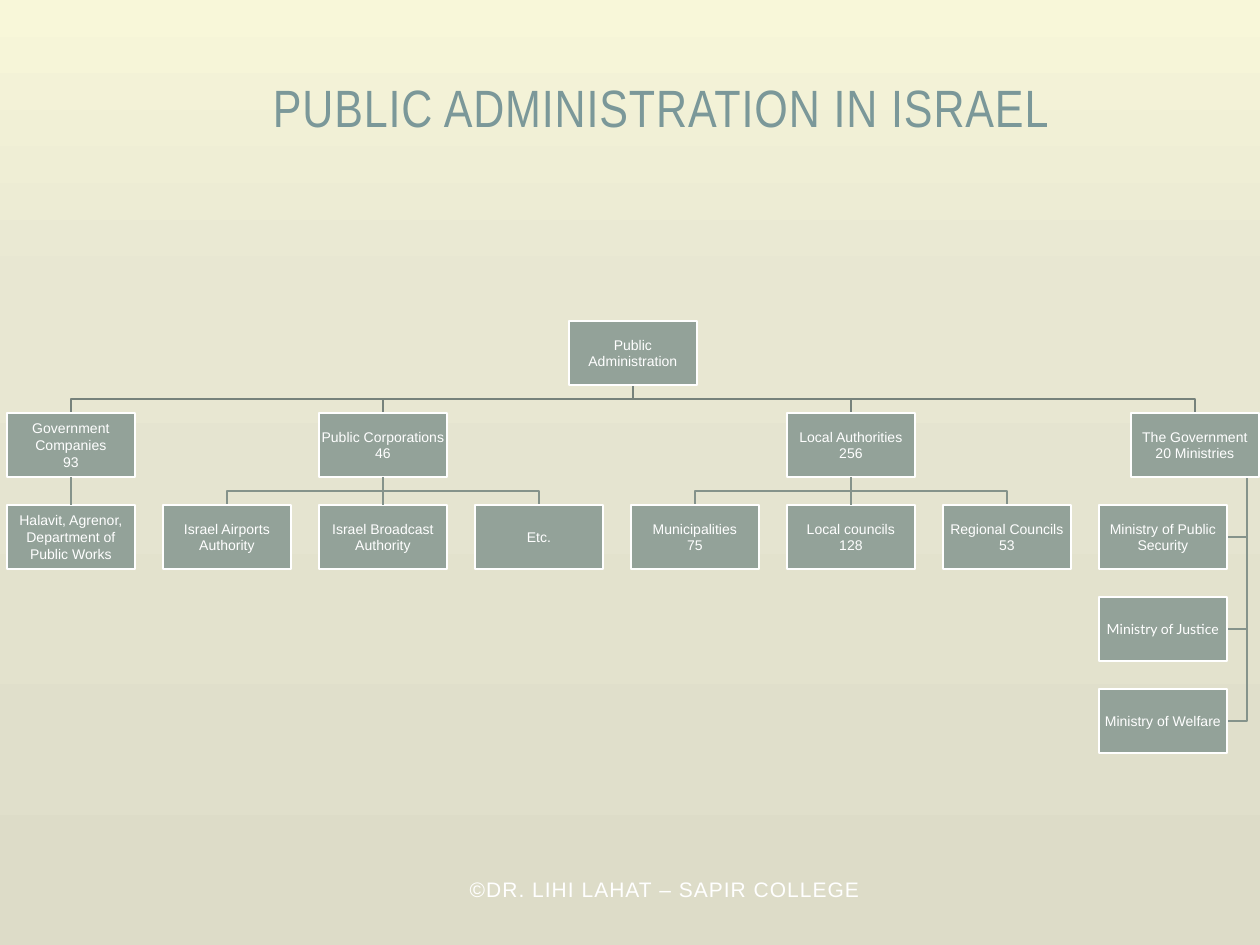
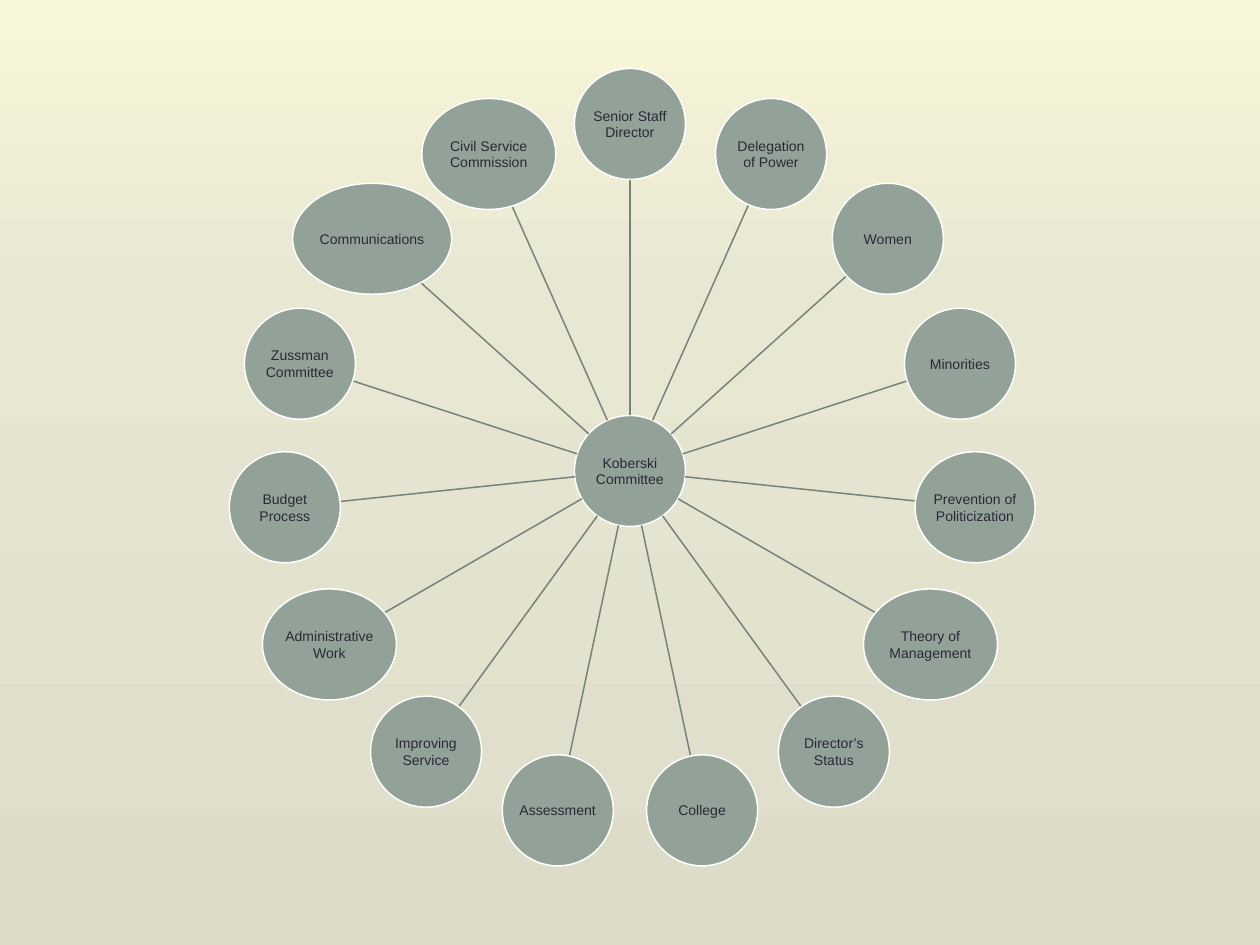
"""Build two slides: Israel's public administration tree and the Koberski Committee wheel."""
import copy
import math
from dataclasses import dataclass

from lxml import etree
from pptx import Presentation
from pptx import util as u
from pptx.dml.color import RGBColor
from pptx.enum import shapes, text
from pptx.oxml import ns


@dataclass(frozen=True)
class Theme:
    background: tuple = ((0, "F8F7D9"), (0.31, "E8E7D2"), (1, "DDDCC8"))
    title: str = "7B9899"
    node: str = "93A299"
    white: str = "FFFFFF"
    dark: str = "292934"
    main_line: str = "76827B"
    sub_line: str = "85938B"
    title_font: str = "Arial Narrow"
    body_font: str = "Arial"
    accent_font: str = "Lato"
    title_size: int = 30
    space_size: int = 18
    footer_size: int = 12
    node_size: int = 8
    line_width: float = 0.85


theme = Theme()
SCALE = 914400 / 126


def style_line(shape, color):
    shape.line.color.rgb = RGBColor.from_string(color)
    shape.line.width = u.Pt(theme.line_width)
    etree.SubElement(shape.element.spPr, ns.qn("a:effectLst"))


def add_node(slide, preset, box, label, color, font=theme.body_font):
    shape = slide.shapes.add_shape(preset, *(round(length * SCALE) for length in box))
    shape.fill.solid()
    shape.fill.fore_color.rgb = RGBColor.from_string(theme.node)
    style_line(shape, theme.white)
    frame = shape.text_frame
    frame.margin_left = frame.margin_right = frame.margin_top = frame.margin_bottom = 0
    frame.vertical_anchor = text.MSO_ANCHOR.MIDDLE
    frame.word_wrap = True
    frame.text = label
    for paragraph in frame.paragraphs:
        paragraph.alignment = text.PP_ALIGN.CENTER
        paragraph.font.name = font
        paragraph.font.size = u.Pt(theme.node_size)
        paragraph.font.color.rgb = RGBColor.from_string(color)
    return shape


presentation = Presentation()
presentation.slide_width = round(1260 * SCALE)
presentation.slide_height = round(945 * SCALE)

master = presentation.slide_master
fill = master.background.fill
fill.gradient()
fill.gradient_angle = 270
stop_list = next(master.element.iter(ns.qn("a:gsLst")))
stop_list.append(copy.deepcopy(stop_list[0]))
for stop, (position, color) in zip(fill.gradient_stops, theme.background):
    stop.position = position
    stop.color.rgb = RGBColor.from_string(color)

slide = presentation.slides.add_slide(presentation.slide_layouts[5])
title = slide.shapes.title
title.left, title.top, title.width, title.height = (
    round(length * SCALE) for length in (126, 38, 1071, 106))
title.text_frame.text = "PUBLIC ADMINISTRATION IN ISRAEL"
title.text_frame.vertical_anchor = text.MSO_ANCHOR.BOTTOM
title.text_frame.auto_size = text.MSO_AUTO_SIZE.NONE
paragraph = title.text_frame.paragraphs[0]
paragraph.alignment = text.PP_ALIGN.CENTER
paragraph.font.name = theme.title_font
paragraph.font.size = u.Pt(theme.title_size)
paragraph.font.color.rgb = RGBColor.from_string(theme.title)
paragraph.runs[0]._r.get_or_add_rPr().set("spc", "50")

footer = slide.shapes.add_textbox(*(round(length * SCALE) for length in (432, 860, 456, 63)))
footer.text_frame.word_wrap = True
paragraph = footer.text_frame.paragraphs[0]
paragraph.alignment = text.PP_ALIGN.CENTER
paragraph.font.name = theme.body_font
paragraph.font.color.rgb = RGBColor.from_string(theme.white)
for words, size in ((" ", theme.space_size),
                    ("©DR. LIHI LAHAT – SAPIR COLLEGE", theme.footer_size)):
    run = paragraph.add_run()
    run.text = words
    run.font.size = u.Pt(size)
    run._r.get_or_add_rPr().set("spc", "60")

NODE_WIDTH, NODE_HEIGHT = 128, 64
HALF_WIDTH, HALF_HEIGHT = NODE_WIDTH // 2, NODE_HEIGHT // 2
ROOT_TOP, ROW_STEP = 321, 92
BRANCH_TOP, LEAF_TOP = ROOT_TOP + ROW_STEP, ROOT_TOP + 2 * ROW_STEP
HALF_GAP = (ROW_STEP - NODE_HEIGHT) // 2
column_centers = [71 + 156 * column for column in range(8)]
ROOT_CENTER, GOVERNMENT_CENTER, TRUNK_X = 633, 1195, 1247

branches = [
    ("Government\nCompanies\n93", 0, ["Halavit, Agrenor, Department of Public Works"]),
    ("Public Corporations\n46", 1,
     ["Israel Airports Authority", "Israel Broadcast Authority", "Etc."]),
    ("Local Authorities\n256", 4,
     ["Municipalities\n75", "Local councils\n128", "Regional Councils\n53"]),
]
ministries = [
    ("Ministry of Public Security", theme.body_font),
    ("Ministry of Justice", theme.accent_font),
    ("Ministry of Welfare", theme.body_font),
]

nodes = [(ROOT_CENTER, ROOT_TOP, "Public Administration", theme.body_font),
         (GOVERNMENT_CENTER, BRANCH_TOP, "The Government\n20 Ministries", theme.body_font)]
elbows = []
straight_links = []
branch_centers = [GOVERNMENT_CENTER]
for label, first_column, leaves in branches:
    leaf_centers = column_centers[first_column:first_column + len(leaves)]
    center = leaf_centers[len(leaves) // 2]
    branch_centers.append(center)
    nodes.append((center, BRANCH_TOP, label, theme.body_font))
    branch_index = len(nodes) - 1
    for leaf, leaf_center in zip(leaves, leaf_centers):
        nodes.append((leaf_center, LEAF_TOP, leaf, theme.body_font))
        if leaf_center == center:
            straight_links.append((branch_index, len(nodes) - 1))
        else:
            bend = LEAF_TOP - HALF_GAP
            elbows.append((theme.sub_line, [(center, BRANCH_TOP + NODE_HEIGHT), (center, bend),
                                            (leaf_center, bend), (leaf_center, LEAF_TOP)]))
for row, (label, font) in enumerate(ministries):
    top = LEAF_TOP + row * ROW_STEP
    nodes.append((column_centers[7], top, label, font))
    elbows.append((theme.sub_line, [(TRUNK_X, BRANCH_TOP + NODE_HEIGHT),
                                    (TRUNK_X, top + HALF_HEIGHT),
                                    (column_centers[7] + HALF_WIDTH, top + HALF_HEIGHT)]))
for center in branch_centers:
    bend = BRANCH_TOP - HALF_GAP
    elbows.append((theme.main_line, [(ROOT_CENTER, ROOT_TOP + NODE_HEIGHT), (ROOT_CENTER, bend),
                                     (center, bend), (center, BRANCH_TOP)]))

for color, points in elbows:
    builder = slide.shapes.build_freeform(*points[0], scale=SCALE)
    builder.add_line_segments(points[1:], close=False)
    elbow = builder.convert_to_shape()
    elbow.fill.background()
    style_line(elbow, color)
boxes = [add_node(slide, shapes.MSO_SHAPE.RECTANGLE,
                  (center - HALF_WIDTH, top, NODE_WIDTH, NODE_HEIGHT), label, theme.white, font)
         for center, top, label, font in nodes]
for parent, child in straight_links:
    connector = slide.shapes.add_connector(shapes.MSO_CONNECTOR.STRAIGHT, 0, 0, 0, 0)
    connector.begin_connect(boxes[parent], 2)
    connector.end_connect(boxes[child], 0)
    style_line(connector, theme.sub_line)

slide = presentation.slides.add_slide(presentation.slide_layouts[6])
HUB_X, HUB_Y, RADIUS, DIAMETER = 630, 471, 347, 111
topics = [
    ("Senior Staff Director", DIAMETER),
    ("Delegation of Power", DIAMETER),
    ("Women", DIAMETER),
    ("Minorities", DIAMETER),
    ("Prevention of Politicization", 120),
    ("Theory of Management", 134),
    ("Director’s Status", DIAMETER),
    ("College", DIAMETER),
    ("Assessment", DIAMETER),
    ("Improving Service", DIAMETER),
    ("Administrative Work", 134),
    ("Budget Process", DIAMETER),
    ("Zussman Committee", DIAMETER),
    ("Communications", 159),
    ("Civil Service Commission", 134),
]
add_node(slide, shapes.MSO_SHAPE.OVAL,
         (HUB_X - DIAMETER / 2, HUB_Y - DIAMETER / 2, DIAMETER, DIAMETER),
         "Koberski Committee", theme.dark)
for index, (label, width) in enumerate(topics):
    angle = math.tau * index / len(topics)
    across, down = math.sin(angle), -math.cos(angle)
    edge = 1 / math.hypot(across / (width / 2), down / (DIAMETER / 2))
    ends = [HUB_X + across * DIAMETER / 2, HUB_Y + down * DIAMETER / 2,
            HUB_X + across * (RADIUS - edge), HUB_Y + down * (RADIUS - edge)]
    spoke = slide.shapes.add_connector(
        shapes.MSO_CONNECTOR.STRAIGHT, *(round(length * SCALE) for length in ends))
    style_line(spoke, theme.main_line)
    add_node(slide, shapes.MSO_SHAPE.OVAL,
             (HUB_X + across * RADIUS - width / 2, HUB_Y + down * RADIUS - DIAMETER / 2,
              width, DIAMETER), label, theme.dark)

presentation.save("out.pptx")
